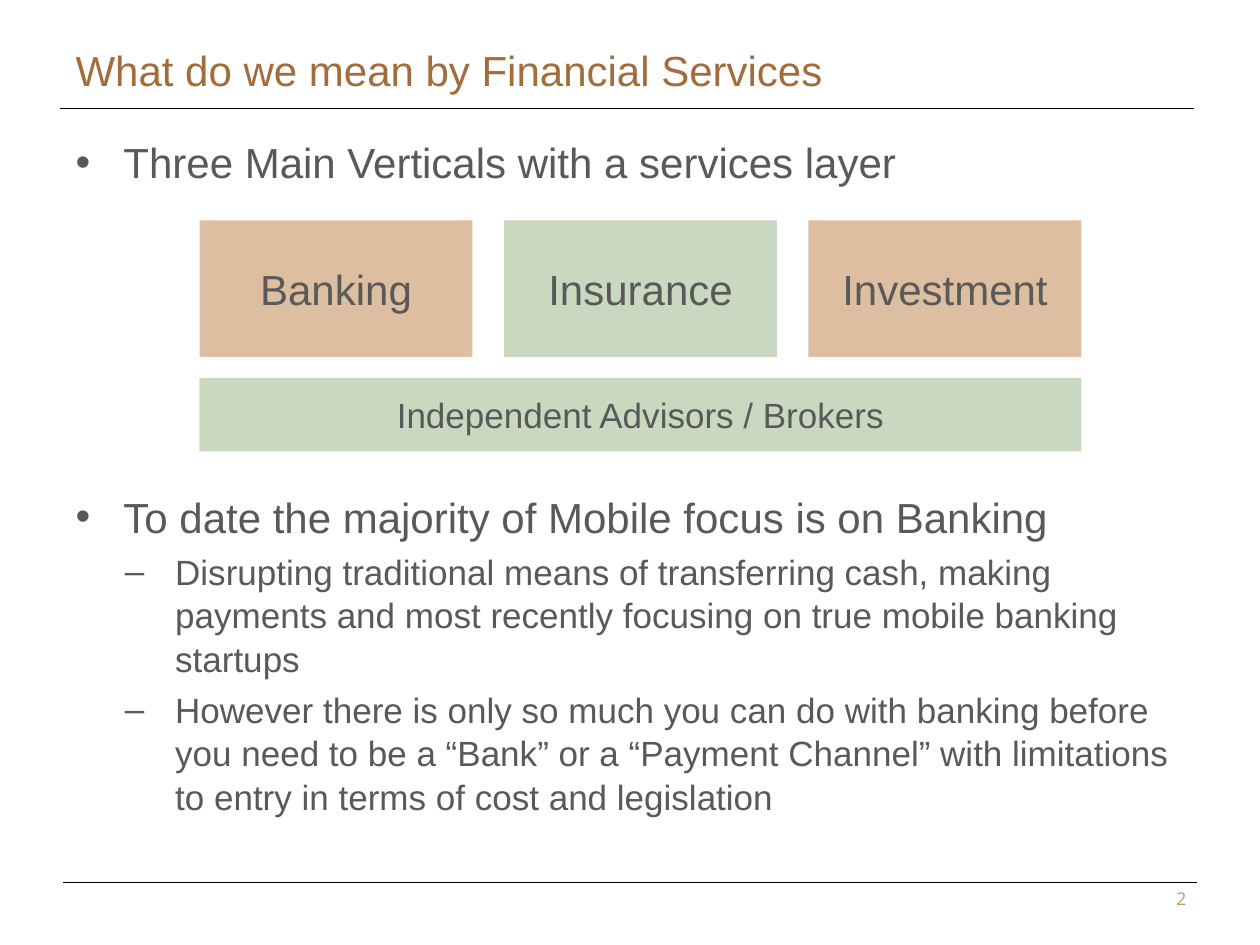
from pptx import Presentation
from pptx.dml.color import RGBColor
from pptx.enum.shapes import MSO_CONNECTOR, MSO_SHAPE
from pptx.enum.text import MSO_ANCHOR, MSO_AUTO_SIZE, PP_ALIGN
from pptx.oxml.ns import qn
from pptx.util import Inches, Pt
from lxml.etree import SubElement

THEME = {
    "font": "Arial", "number_font": "Open Sans",
    "title": "A36D3B", "text": "595959", "number": "B59E65", "rule": "000000",
    "tan": "DDBEA0", "green": "C9D9C0",
    "large": 24, "medium": 20, "small": 10,
}

prs = Presentation()
prs.slide_width, prs.slide_height = Inches(10), Inches(7.5)
W, H = prs.slide_width, prs.slide_height
U = W // 120
s = prs.slides.add_slide(prs.slide_layouts[1])


def style(p, size, color="text", font="font", align=PP_ALIGN.LEFT):
    p.alignment = align
    for r in p.runs:
        r.font.name = THEME[font]
        r.font.size = Pt(THEME[size])
        r.font.color.rgb = RGBColor.from_string(THEME[color])


def add_box(text, col, row, cols, rows, fill, size):
    sp = s.shapes.add_shape(MSO_SHAPE.RECTANGLE, col * U, row * U, cols * U, rows * U)
    sp.shadow.inherit = False
    sp.fill.solid()
    sp.fill.fore_color.rgb = RGBColor.from_string(THEME[fill])
    sp.line.fill.background()
    tf = sp.text_frame
    tf.text = text
    tf.vertical_anchor = MSO_ANCHOR.MIDDLE
    style(tf.paragraphs[0], size, align=PP_ALIGN.CENTER)


for left, top, weight in [(0.05, 7 / 7.5, 0.5), (0.048, 0.86 / 7.5, 0.75)]:
    x, y = int(W * left), int(H * top)
    line = s.shapes.add_connector(MSO_CONNECTOR.STRAIGHT, x, y, x + int(W * 0.9), y)
    line.line.color.rgb = RGBColor.from_string(THEME["rule"])
    line.line.width = Pt(weight)
    SubElement(line._element.spPr, qn("a:effectLst"))

title, body = s.shapes.title, s.placeholders[1]
for sp, top, height in [(title, 0.04, 0.0573), (body, 0.136, 0.775)]:
    sp.left, sp.top = int(W * 0.05), int(H * top)
    sp.width, sp.height = int(W * 0.9), int(H * height)
    sp.text_frame.vertical_anchor = MSO_ANCHOR.TOP
    sp.text_frame.auto_size = MSO_AUTO_SIZE.NONE
    sp.text_frame.word_wrap = True

title.text_frame.text = "What do we mean by Financial Services"
style(title.text_frame.paragraphs[0], "large", "title")

bullets = [
    (0, 0, "Three Main Verticals with a services layer"),
    (0, 172.5, "To date the majority of Mobile focus is on Banking"),
    (1, 4, "Disrupting traditional means of transferring cash, making payments "
           "and most recently focusing on true mobile banking startups"),
    (1, 4, "However there is only so much you can do with banking before you need "
           "to be a “Bank” or a “Payment Channel” with limitations to entry "
           "in terms of cost and legislation"),
]
levels = [("large", 0.38, 0.38, "•"), ("medium", 0.79, 0.4, "–")]
tf = body.text_frame
for i, (level, before, text) in enumerate(bullets):
    p = tf.add_paragraph() if i else tf.paragraphs[0]
    size, margin, hang, mark = levels[level]
    p.text = text
    p.level = level
    p.line_spacing = 1.04
    p.space_before = Pt(before)
    style(p, size)
    pPr = p._p.get_or_add_pPr()
    pPr.set("marL", str(Inches(margin)))
    pPr.set("indent", str(-Inches(hang)))
    SubElement(pPr, qn("a:buFont"), typeface=THEME["font"])
    SubElement(pPr, qn("a:buChar"), char=mark)

verticals = [("Banking", "tan"), ("Insurance", "green"), ("Investment", "tan")]
for i, (name, fill) in enumerate(verticals):
    add_box(name, 19 + 29 * i, 21, 26, 13, fill, "large")
add_box("Independent Advisors / Brokers", 19, 36, 84, 7, "green", "medium")

number = s.shapes.add_textbox(106 * U, 84 * U, 13 * U, int(H * 0.036))
tf = number.text_frame
tf.word_wrap = True
tf.text = "2"
style(tf.paragraphs[0], "small", "number", "number_font", PP_ALIGN.CENTER)

prs.save("out.pptx")
